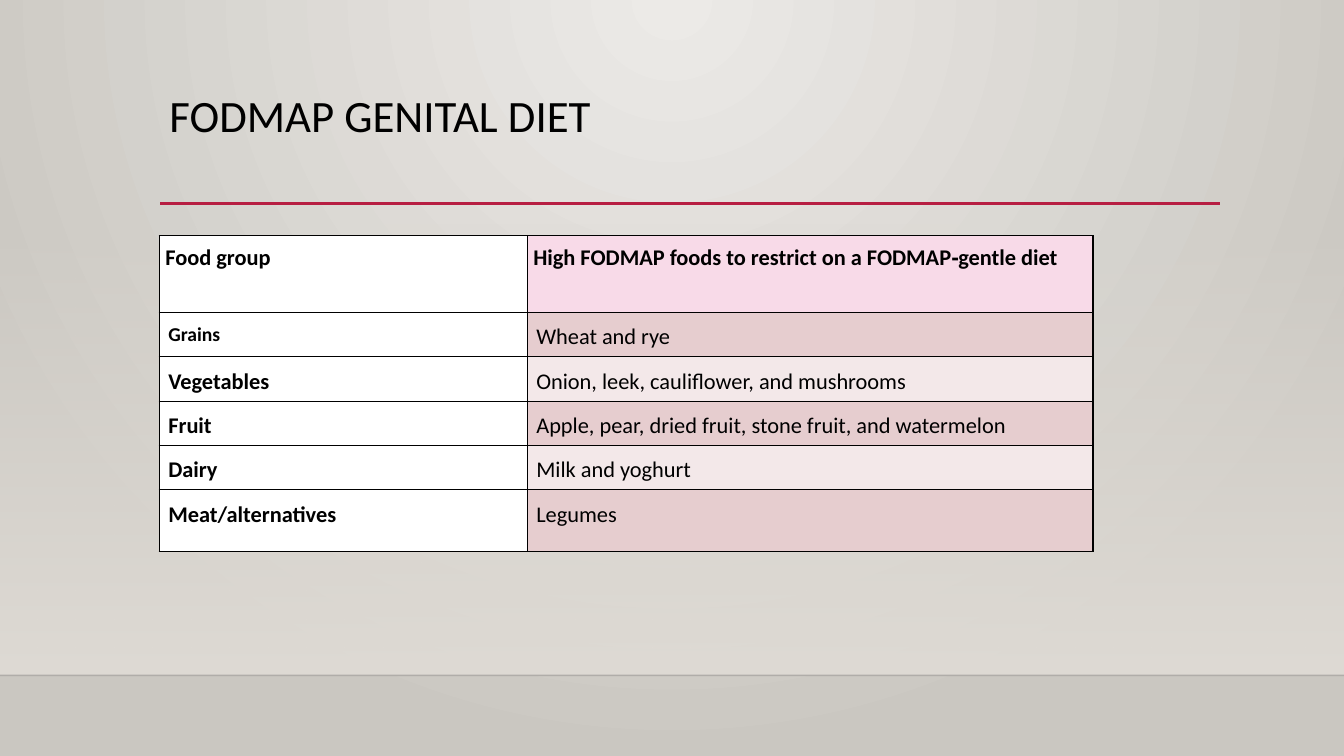
from lxml.etree import SubElement
from pptx import Presentation
from pptx.dml.color import RGBColor
from pptx.enum.shapes import MSO_CONNECTOR, MSO_SHAPE
from pptx.enum.text import MSO_ANCHOR, PP_ALIGN
from pptx.oxml import parse_xml
from pptx.oxml.ns import nsdecls, qn
from pptx.util import Inches, Pt


def color(hex_code):
    return RGBColor.from_string(hex_code)


def gradient(start, start_alpha, end, direction):
    return parse_xml(
        f'<a:gradFill {nsdecls("a")} rotWithShape="1"><a:gsLst>'
        f'<a:gs pos="0"><a:srgbClr val="{start}"><a:alpha val="{start_alpha}"/></a:srgbClr></a:gs>'
        f'<a:gs pos="100000"><a:srgbClr val="{end}"/></a:gs>'
        f'</a:gsLst>{direction}</a:gradFill>'
    )


deck = Presentation()
deck.slide_width = Inches(13.33)
deck.slide_height = Inches(7.5)
slide = deck.slides.add_slide(deck.slide_layouts[5])

slide.background.fill.solid()
background_fill = slide.background._cSld.find(".//" + qn("a:solidFill"))
background_fill.getparent().replace(background_fill, gradient(
    "ECEAE7", 100000, "CAC7C1",
    '<a:path path="circle"><a:fillToRect l="43000" t="0" r="43000" b="100000"/></a:path>'))

floor = Inches(6.7)
wall_top = Inches(2.21)
wall = slide.shapes.add_shape(MSO_SHAPE.RECTANGLE, 0, wall_top, deck.slide_width, floor - wall_top)
wall.shadow.inherit = False
wall.line.fill.background()
wall.fill.solid()
wall_fill = wall._element.spPr.find(qn("a:solidFill"))
wall._element.spPr.replace(wall_fill, gradient("DFDBD5", 0, "DFDBD5", '<a:lin ang="5400000" scaled="0"/>'))

rules = [
    (0, deck.slide_width, floor, "000001", 1, 20000),
    (Inches(1.59), Inches(12.1), Inches(2.02), "B71E42", 2.5, 100000),
]
for left, right, height, hex_code, weight, alpha in rules:
    rule = slide.shapes.add_connector(MSO_CONNECTOR.STRAIGHT, left, height, right, height)
    rule.line.color.rgb = color(hex_code)
    rule.line.width = Pt(weight)
    SubElement(rule._element.spPr.find(".//" + qn("a:srgbClr")), qn("a:alpha"), val=str(alpha))
    SubElement(rule._element.spPr, qn("a:effectLst"))

title = slide.shapes.title
title.left, title.top, title.width, title.height = map(Inches, (1.58, 0.88, 10.5, 1.16))
title.text_frame.text = "FODMAP GENITAL DIET"
title.text_frame.vertical_anchor = MSO_ANCHOR.TOP
heading = title.text_frame.paragraphs[0]
heading.alignment = PP_ALIGN.LEFT
heading.line_spacing = 0.9
heading.font.name = "Calibri"
heading.font.size = Pt(32)
heading.font.color.rgb = color("000000")

foods = [
    ("Food group", "High FODMAP foods to restrict on a FODMAP‐gentle diet"),
    ("Grains", "Wheat and rye"),
    ("Vegetables", "Onion, leek, cauliflower, and mushrooms"),
    ("Fruit", "Apple, pear, dried fruit, stone fruit, and watermelon"),
    ("Dairy", "Milk and yoghurt"),
    ("Meat/alternatives", "Legumes"),
]
column_widths = [3.65, 5.61]
row_heights = [0.76] + [0.44] * 4 + [0.61]
last_row = len(foods) - 1

table = slide.shapes.add_table(
    len(foods), len(column_widths), Inches(1.58), Inches(2.34),
    Inches(sum(column_widths)), Inches(sum(row_heights))).table
for column, width in zip(table.columns, column_widths):
    column.width = Inches(width)

for row_index, (row, texts) in enumerate(zip(table.rows, foods)):
    row.height = Inches(row_heights[row_index])
    is_header = row_index == 0
    margin = Inches(0.06 if is_header else 0.09)
    food_fill = "F8DAE8" if is_header else ("F3E8E9", "E6CDCF")[row_index % 2]
    for column_index, (cell, text) in enumerate(zip(row.cells, texts)):
        cell.margin_left = cell.margin_right = cell.margin_top = margin
        cell.margin_bottom = margin if row_index in (0, last_row) else 0
        for side in ("a:lnL", "a:lnR", "a:lnT", "a:lnB"):
            border = SubElement(cell._tc.get_or_add_tcPr(), qn(side), w=str(Pt(1)))
            SubElement(SubElement(border, qn("a:solidFill")), qn("a:srgbClr"), val="000000")
        cell.fill.solid()
        cell.fill.fore_color.rgb = color(food_fill if column_index else "FFFFFF")
        cell.text_frame.text = text
        para = cell.text_frame.paragraphs[0]
        para.line_spacing = 1.07
        para.space_after = Pt(8)
        span = para.runs[0]
        span.font.name = "Calibri"
        span.font.size = Pt(14 if text == "Grains" else 16)
        span.font.bold = is_header or column_index == 0
        span.font.color.rgb = color("000000")

deck.save("out.pptx")
